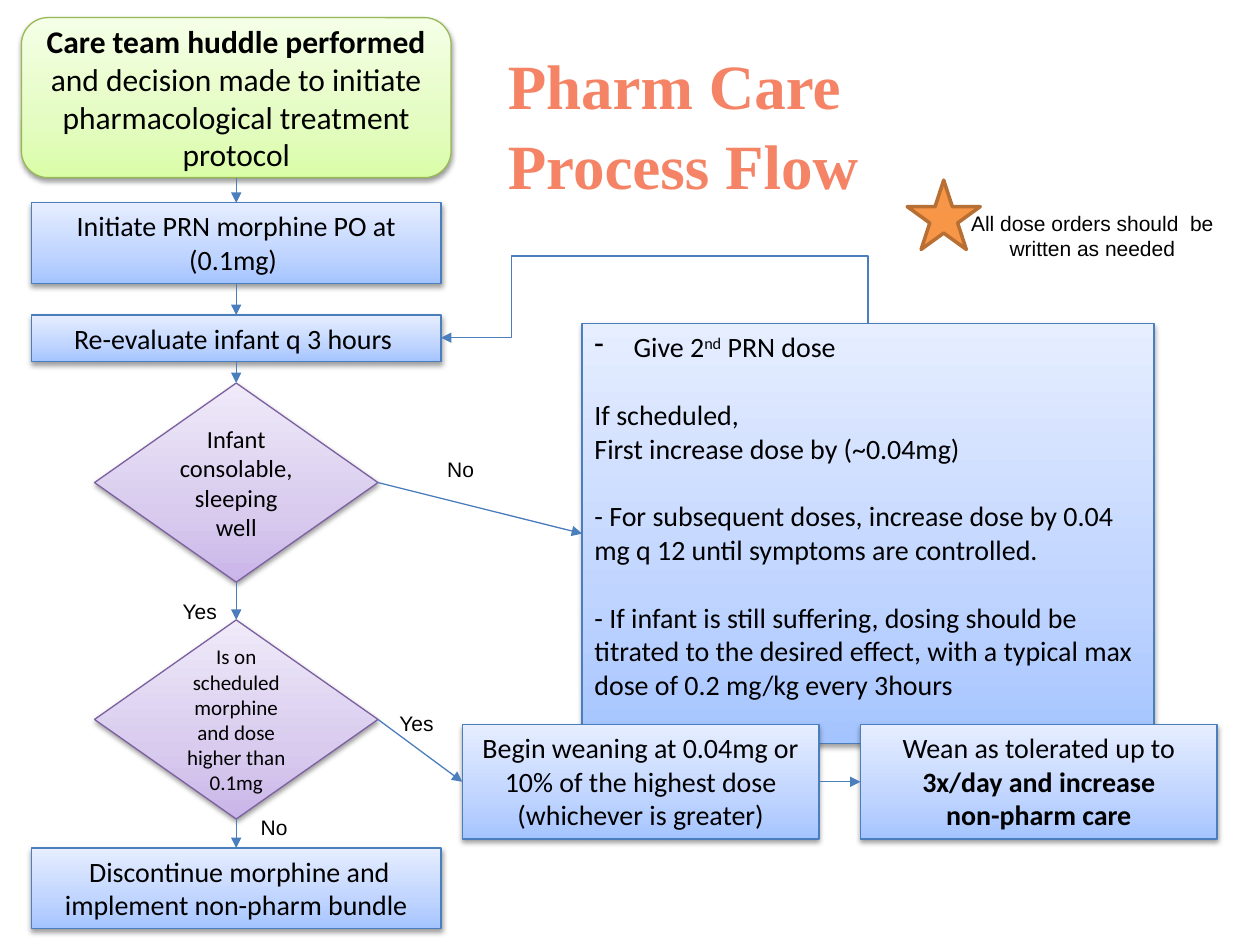
from copy import deepcopy

from lxml import etree
from pptx import Presentation
from pptx.dml.color import RGBColor
from pptx.enum.shapes import MSO_CONNECTOR as Link, MSO_SHAPE as Shape
from pptx.enum.text import MSO_ANCHOR as Anchor, MSO_AUTO_SIZE as AutoSize, PP_ALIGN as Align
from pptx.oxml.ns import qn
from pptx.util import Inches, Pt

BLACK = RGBColor(0x00, 0x00, 0x00)
CORAL = RGBColor(0xF5, 0x84, 0x66)
STAR_FILL = RGBColor(0xF7, 0x96, 0x46)
STAR_LINE = RGBColor(0xB7, 0x6F, 0x34)
BLUE_LINE = RGBColor(0x4B, 0x7E, 0xBC)
GREEN_LINE = RGBColor(0x98, 0xB9, 0x55)
PURPLE_LINE = RGBColor(0x7D, 0x60, 0xA0)
BLUES = [RGBColor(0xA4, 0xC4, 0xFF), RGBColor(0xBF, 0xD4, 0xFF), RGBColor(0xE6, 0xEE, 0xFF)]
GREENS = [RGBColor(0xDA, 0xFD, 0xA7), RGBColor(0xE4, 0xFC, 0xC2), RGBColor(0xF5, 0xFF, 0xE7)]
PURPLES = [RGBColor(0xC9, 0xB5, 0xE8), RGBColor(0xD8, 0xCB, 0xEE), RGBColor(0xF0, 0xEA, 0xF9)]
STOPS = [0, 0.35, 1]

START = {"kind": Shape.ROUNDED_RECTANGLE, "tints": GREENS, "edge": GREEN_LINE, "size": 18}
STEP = {"kind": Shape.RECTANGLE, "tints": BLUES, "edge": BLUE_LINE, "size": 16, "grow": True}
DECISION = {"kind": Shape.FLOWCHART_DECISION, "tints": PURPLES, "edge": PURPLE_LINE}
TOP, LEFT, BOTTOM, RIGHT = range(4)


def set_font(font, **formats):
    color = formats.pop("color", BLACK)
    for name, value in formats.items():
        setattr(font, name, value)
    font.color.rgb = color


def add_run(paragraph, text, name="Calibri", size=16, **formats):
    run = paragraph.add_run()
    run.text = text
    set_font(run.font, name=name, size=Pt(size), **formats)
    return run


def add_effects(shape):
    return etree.SubElement(shape._element.spPr, qn("a:effectLst"))


def add_soft_shadow(shape):
    shape.shadow.inherit = False
    effects = shape._element.spPr.find(qn("a:effectLst"))
    shadow = etree.SubElement(effects, qn("a:outerShdw"), blurRad=str(Pt(3.1)),
                              dist=str(Pt(1.6)), dir="5400000", rotWithShape="0")
    color = etree.SubElement(shadow, qn("a:srgbClr"), val="000000")
    etree.SubElement(color, qn("a:alpha"), val="38000")


def fill_gradient(shape, tints):
    shape.fill.gradient()
    shape.fill.gradient_angle = 90
    stop_list = shape._element.spPr.find(".//" + qn("a:gsLst"))
    stop_list.insert(1, deepcopy(stop_list[0]))
    for stop, tint, position in zip(shape.fill.gradient_stops, tints, STOPS):
        stop.color.rgb = tint
        stop.position = position


def add_node(slide, box, runs, kind, tints, edge, size, grow=False):
    node = slide.shapes.add_shape(kind, *map(Inches, box))
    fill_gradient(node, tints)
    node.line.color.rgb = edge
    node.line.width = Pt(0.75)
    add_soft_shadow(node)
    frame = node.text_frame
    frame.word_wrap = True
    frame.vertical_anchor = Anchor.TOP if grow else Anchor.MIDDLE
    frame.auto_size = AutoSize.SHAPE_TO_FIT_TEXT if grow else AutoSize.NONE
    paragraph = frame.paragraphs[0]
    paragraph.alignment = Align.CENTER
    for text, bold in runs:
        add_run(paragraph, text, size=size, bold=bold)
    return node


def add_dose_box(slide):
    box = add_node(slide, (4.62, 2.57, 4.54, 3.33), [], **STEP)
    box.text_frame.auto_size = AutoSize.NONE
    first = box.text_frame.paragraphs[0]
    first.alignment = Align.LEFT
    properties = first._p.get_or_add_pPr()
    properties.set("marL", str(Inches(0.31)))
    properties.set("indent", str(-Inches(0.31)))
    etree.SubElement(properties, qn("a:buChar"), char="-")
    add_run(first, "Give 2")
    ordinal = add_run(first, "nd")
    ordinal._r.get_or_add_rPr().set("baseline", "30000")
    add_run(first, " PRN dose")
    for text, gap in [
        ("If scheduled,", 19.5),
        ("First increase dose by (~0.04mg)", 0),
        ("- For subsequent doses, increase dose by 0.04 mg q 12 until symptoms are controlled.", 19.5),
        ("- If infant is still suffering, dosing should be titrated to the desired effect, "
         "with a typical max dose of 0.2 mg/kg every 3hours", 19.5),
    ]:
        paragraph = box.text_frame.add_paragraph()
        paragraph.alignment = Align.LEFT
        paragraph.space_before = Pt(gap)
        add_run(paragraph, text)
    return box


def style_arrow(arrow):
    arrow.line.color.rgb = BLUE_LINE
    arrow.line.width = Pt(0.75)
    etree.SubElement(arrow.line._get_or_add_ln(), qn("a:tailEnd"), type="triangle")
    add_effects(arrow)


def add_arrow(slide, source, source_side, target, target_side):
    arrow = slide.shapes.add_connector(Link.STRAIGHT, 0, 0, 0, 0)
    arrow.begin_connect(source, source_side)
    arrow.end_connect(target, target_side)
    style_arrow(arrow)


def add_return_arrow(slide):
    arrow = slide.shapes.add_connector(
        Link.ELBOW, Inches(5.25), Inches(4.32), Inches(5.14), Inches(0.93))
    properties = arrow._element.spPr
    properties.find(qn("a:xfrm")).set("rot", "16200000")
    geometry = properties.find(qn("a:prstGeom"))
    geometry.set("prst", "bentConnector4")
    guides = geometry.find(qn("a:avLst"))
    if guides is None:
        guides = etree.SubElement(geometry, qn("a:avLst"))
    for name, value in [("adj1", -489700), ("adj2", 83500)]:
        etree.SubElement(guides, qn("a:gd"), name=name, fmla=f"val {value}")
    style_arrow(arrow)


def add_label(slide, box, text, spacer=False):
    label = slide.shapes.add_textbox(*map(Inches, box))
    frame = label.text_frame
    frame.word_wrap = True
    frame.auto_size = AutoSize.SHAPE_TO_FIT_TEXT
    paragraph = frame.paragraphs[0]
    paragraph.alignment = Align.CENTER
    add_run(paragraph, text, name="Arial", size=12)
    if spacer:
        add_run(paragraph, " ", name="Arial", size=18)


def add_title(slide):
    title = slide.shapes.title
    title.left, title.top, title.width, title.height = map(Inches, (3.93, 0.24, 3.21, 1.25))
    frame = title.text_frame
    frame.auto_size = AutoSize.NONE
    frame.vertical_anchor = Anchor.TOP
    frame.margin_top = Inches(0.1)
    for text, paragraph in [("Pharm Care", frame.paragraphs[0]),
                            ("Process Flow", frame.add_paragraph())]:
        paragraph.alignment = Align.LEFT
        paragraph.line_spacing = 1.05
        add_run(paragraph, text, name="Times New Roman", size=36, bold=True, color=CORAL)


def add_star(slide):
    star = slide.shapes.add_shape(Shape.STAR_5_POINT, *map(Inches, (7.2, 1.43, 0.58, 0.55)))
    star.shadow.inherit = False
    star.fill.solid()
    star.fill.fore_color.rgb = STAR_FILL
    star.line.color.rgb = STAR_LINE
    star.line.width = Pt(2)


def main():
    deck = Presentation()
    deck.slide_width, deck.slide_height = Inches(10), Inches(7.5)
    slide = deck.slides.add_slide(deck.slide_layouts[5])
    add_title(slide)

    huddle = add_node(slide, (0.17, 0.14, 3.41, 1.27), [
        ("Care team huddle performed ", True),
        ("and decision made to initiate pharmacological treatment protocol", False)], **START)
    initiate = add_node(slide, (0.25, 1.61, 3.25, 0.64),
                        [("Initiate PRN morphine PO at (0.1mg) ", False)], **STEP)
    reevaluate = add_node(slide, (0.25, 2.5, 3.25, 0.37),
                          [("Re-evaluate infant q 3 hours ", False)], **STEP)
    consolable = add_node(slide, (0.75, 3.04, 2.25, 1.58),
                          [("Infant consolable, sleeping well", False)], size=14, **DECISION)
    scheduled = add_node(slide, (0.75, 4.92, 2.25, 1.58),
                         [("Is on scheduled morphine and dose higher than 0.1mg", False)],
                         size=12, **DECISION)
    discontinue = add_node(slide, (0.25, 6.73, 3.25, 0.64), [
        (" Discontinue morphine and implement non-pharm bundle", False)], **STEP)
    dose = add_dose_box(slide)
    begin_wean = add_node(slide, (3.67, 5.75, 2.83, 0.91), [
        ("Begin weaning at 0.04mg or 10% of the highest dose (whichever is greater)", False)], **STEP)
    wean = add_node(slide, (6.83, 5.75, 2.83, 0.91), [
        ("Wean as tolerated up to ", False), ("3x/day and increase", True)], **STEP)
    wean_text = wean.text_frame.paragraphs[0]
    wean_text.add_line_break()
    add_run(wean_text, "non-pharm care", bold=True)

    main_path = [huddle, initiate, reevaluate, consolable, scheduled, discontinue]
    for source, target in zip(main_path, main_path[1:]):
        add_arrow(slide, source, BOTTOM, target, TOP)
    for source, target in [(consolable, dose), (scheduled, begin_wean), (begin_wean, wean)]:
        add_arrow(slide, source, RIGHT, target, LEFT)
    add_return_arrow(slide)

    for answer, left, top in [("No", 3.4, 3.49), ("Yes", 1.33, 4.62),
                              ("Yes", 3.05, 5.51), ("No", 1.92, 6.33)]:
        add_label(slide, (left, top, 0.58, 0.4), answer, spacer=True)
    add_star(slide)
    add_label(slide, (7.51, 1.62, 2.32, 0.5), "All dose orders should  be written as needed")
    deck.save("out.pptx")


if __name__ == "__main__":
    main()
